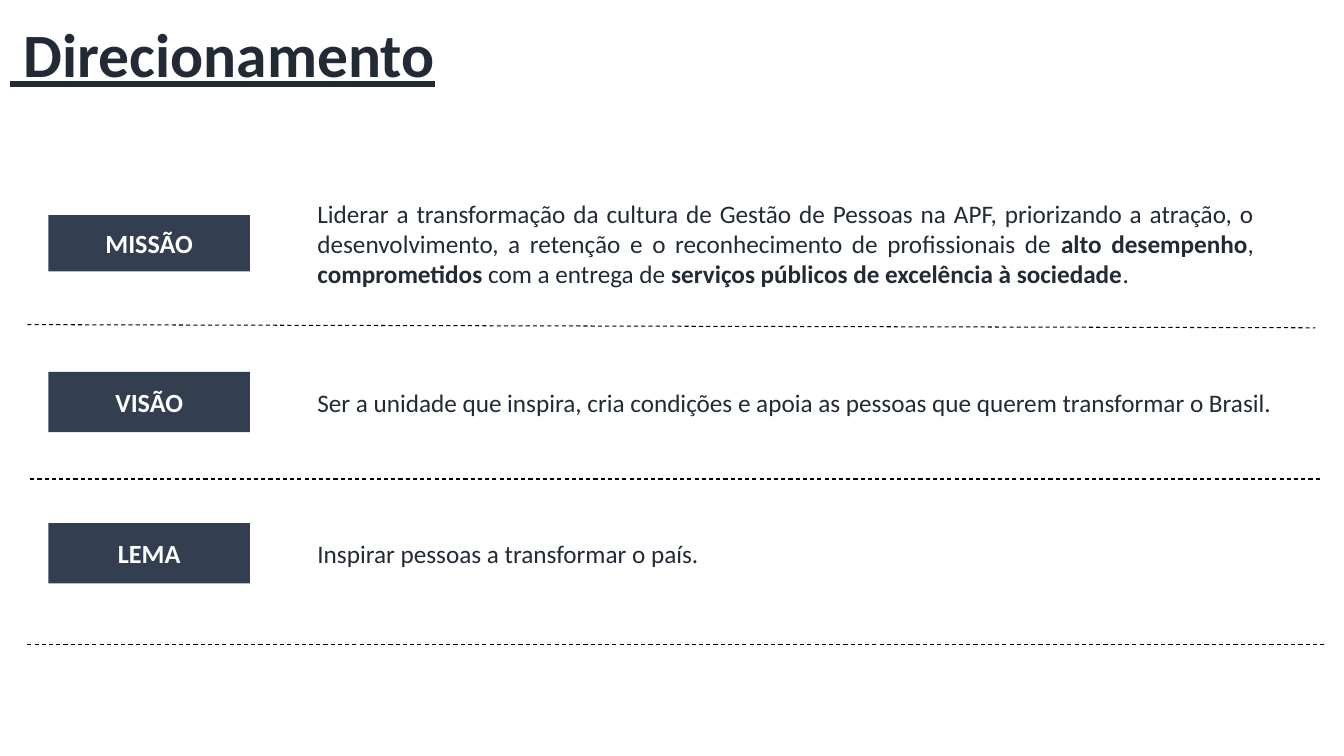
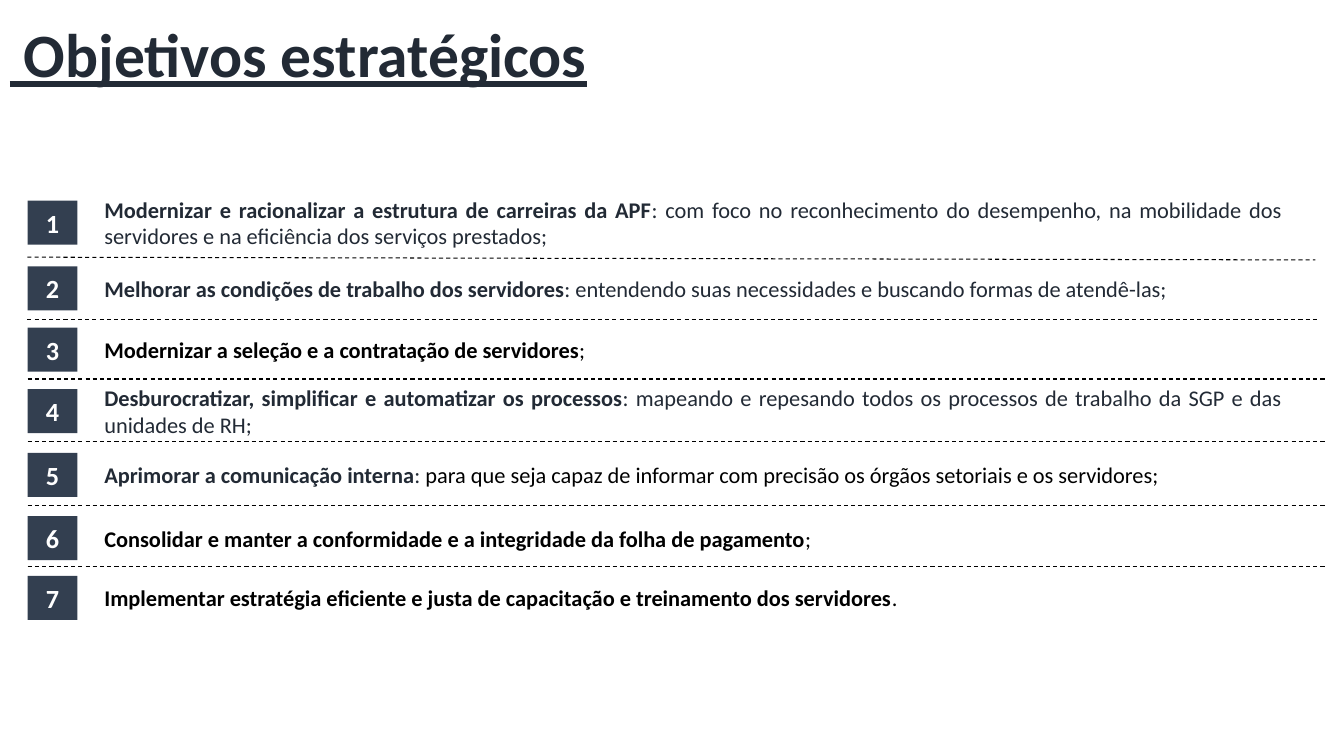
from dataclasses import dataclass
from typing import NamedTuple

from lxml import etree
from pptx import Presentation
from pptx import util as u
from pptx.dml.color import RGBColor
from pptx.enum import dml, shapes, text
from pptx.oxml import ns

FONT = "Calibri"
COLOURS = {"tag": "333F50", "ink": "222A35", "black": "000000", "white": "FFFFFF"}


class Span(NamedTuple):
    text: str
    bold: bool = False
    colour: str = "ink"


class Rule(NamedTuple):
    left: float
    top: float
    right: float
    bottom: float


@dataclass(frozen=True)
class Row:
    label: str
    centre: float
    spans: tuple[Span, ...]
    tag_height: float
    text_width: float
    lines: int = 1


@dataclass(frozen=True)
class Layout:
    tag_left: float
    tag_width: float
    text_left: float
    size: float


@dataclass(frozen=True)
class Content:
    title: str
    layout: Layout
    rows: tuple[Row, ...]
    rules: tuple[Rule, ...]


def colour(name: str) -> RGBColor:
    return RGBColor.from_string(COLOURS[name])


def write(shape, spans: tuple[Span, ...], *, size: float, align=text.PP_ALIGN.LEFT,
          underline: bool = False, spacing: float = 1.0,
          margins: tuple[float, float] = (0.25, 0.13)) -> None:
    frame = shape.text_frame
    frame.word_wrap = True
    frame.vertical_anchor = text.MSO_ANCHOR.MIDDLE
    frame.margin_left = frame.margin_right = u.Cm(margins[0])
    frame.margin_top = frame.margin_bottom = u.Cm(margins[1])
    para = frame.paragraphs[0]
    para.alignment = align
    para.line_spacing = spacing
    for span in spans:
        run = para.add_run()
        run.text = span.text
        run.font.name = FONT
        run.font.size = u.Pt(size)
        run.font.bold = span.bold
        run.font.underline = underline
        run.font.color.rgb = colour(span.colour)


def add_title(page, title: str) -> None:
    box = page.shapes.add_textbox(u.Cm(0), u.Cm(-0.38), u.Cm(29.21), u.Cm(3.68))
    write(box, (Span(title, True),), size=44, underline=True, spacing=0.9)


def add_row(page, row: Row, layout: Layout) -> None:
    tag = page.shapes.add_shape(
        shapes.MSO_SHAPE.RECTANGLE, u.Cm(layout.tag_left),
        u.Cm(row.centre - row.tag_height / 2), u.Cm(layout.tag_width), u.Cm(row.tag_height))
    tag.shadow.inherit = False
    tag.fill.solid()
    tag.fill.fore_color.rgb = colour("tag")
    tag.line.fill.background()
    write(tag, (Span(row.label, True, "white"),), size=18.7,
          align=text.PP_ALIGN.CENTER, margins=(0.34, 0.17))

    height = 0.25 + row.lines * layout.size * 0.043
    box = page.shapes.add_textbox(
        u.Cm(layout.text_left), u.Cm(row.centre - height / 2),
        u.Cm(row.text_width), u.Cm(height))
    write(box, row.spans, size=layout.size, align=text.PP_ALIGN.JUSTIFY)


def add_rule(page, rule: Rule) -> None:
    line = page.shapes.add_connector(
        shapes.MSO_CONNECTOR.STRAIGHT, *(u.Cm(value) for value in rule))
    line.line.color.rgb = colour("black")
    line.line.width = u.Pt(0.75)
    line.line.dash_style = dml.MSO_LINE.DASH
    etree.SubElement(line._element.spPr, ns.qn("a:effectLst"))


def add_page(deck, content: Content) -> None:
    page = deck.slides.add_slide(deck.slide_layouts[6])
    for row in content.rows:
        add_row(page, row, content.layout)
    for rule in content.rules:
        add_rule(page, rule)
    add_title(page, content.title)


def objective(label: int, centre: float, *spans: Span, lines: int = 1) -> Row:
    return Row(str(label), centre, spans, 1.11, 30.18, lines)


DIRECTION = Content(
    " Direcionamento",
    Layout(tag_left=1.22, tag_width=5.08, text_left=7.75, size=18),
    (
        Row("MISSÃO", 6.13, (
            Span("Liderar a transformação da cultura de Gestão de Pessoas na APF, priorizando "
                 "a atração, o desenvolvimento, a retenção e o reconhecimento de "
                 "profissionais de "),
            Span("alto desempenho", True),
            Span(", "),
            Span("comprometidos", True),
            Span(" com a entrega de "),
            Span("serviços públicos de excelência à sociedade", True),
            Span("."),
        ), 1.42, 24.1, 3),
        Row("VISÃO", 10.13, (
            Span("Ser a unidade que inspira, cria condições e apoia as pessoas que querem "
                 "transformar o Brasil."),
        ), 1.52, 26.1),
        Row("LEMA", 13.94, (Span("Inspirar pessoas a transformar o país."),), 1.52, 21.46),
    ),
    (
        Rule(0.69, 8.18, 33.15, 8.26),
        Rule(0.76, 12.07, 33.27, 12.07),
        Rule(0.69, 16.23, 33.38, 16.23),
    ),
)

OBJECTIVES = Content(
    " Objetivos estratégicos",
    Layout(tag_left=0.7, tag_width=1.25, text_left=2.38, size=16),
    (
        objective(1, 5.61,
                  Span("Modernizar e racionalizar a estrutura de carreiras da APF", True),
                  Span(": com foco no reconhecimento do desempenho, na mobilidade dos "
                       "servidores e na eficiência dos serviços prestados;"), lines=2),
        objective(2, 7.27,
                  Span("Melhorar as condições de trabalho dos servidores", True),
                  Span(": entendendo suas necessidades e buscando formas de atendê-las;")),
        objective(3, 8.81,
                  Span("Modernizar a seleção e a contratação de servidores", True, "black"),
                  Span(";", colour="black")),
        objective(4, 10.36,
                  Span("Desburocratizar, simplificar e automatizar os processos", True),
                  Span(": mapeando e repesando todos os processos de trabalho da SGP e das "
                       "unidades de RH;"), lines=2),
        objective(5, 11.97,
                  Span("Aprimorar a comunicação interna", True),
                  Span(": "),
                  Span("para que seja capaz de informar com precisão os órgãos setoriais e "
                       "os servidores;", colour="black")),
        objective(6, 13.56,
                  Span("Consolidar e manter a conformidade e a integridade da folha de "
                       "pagamento", True, "black"),
                  Span(";", colour="black")),
        objective(7, 15.07,
                  Span("Implementar estratégia eficiente e justa de capacitação e "
                       "treinamento dos servidores", True, "black"),
                  Span(".", colour="black")),
    ),
    (
        Rule(0.69, 6.48, 33.15, 6.55),
        Rule(0.69, 8.05, 33.2, 8.05),
        *(Rule(0.7, top, 33.4, top) for top in (9.55, 11.13, 12.75, 14.27)),
    ),
)


def main() -> None:
    deck = Presentation()
    deck.slide_width, deck.slide_height = u.Cm(33.87), u.Cm(19.05)
    for content in (DIRECTION, OBJECTIVES):
        add_page(deck, content)
    deck.save("out.pptx")


if __name__ == "__main__":
    main()
